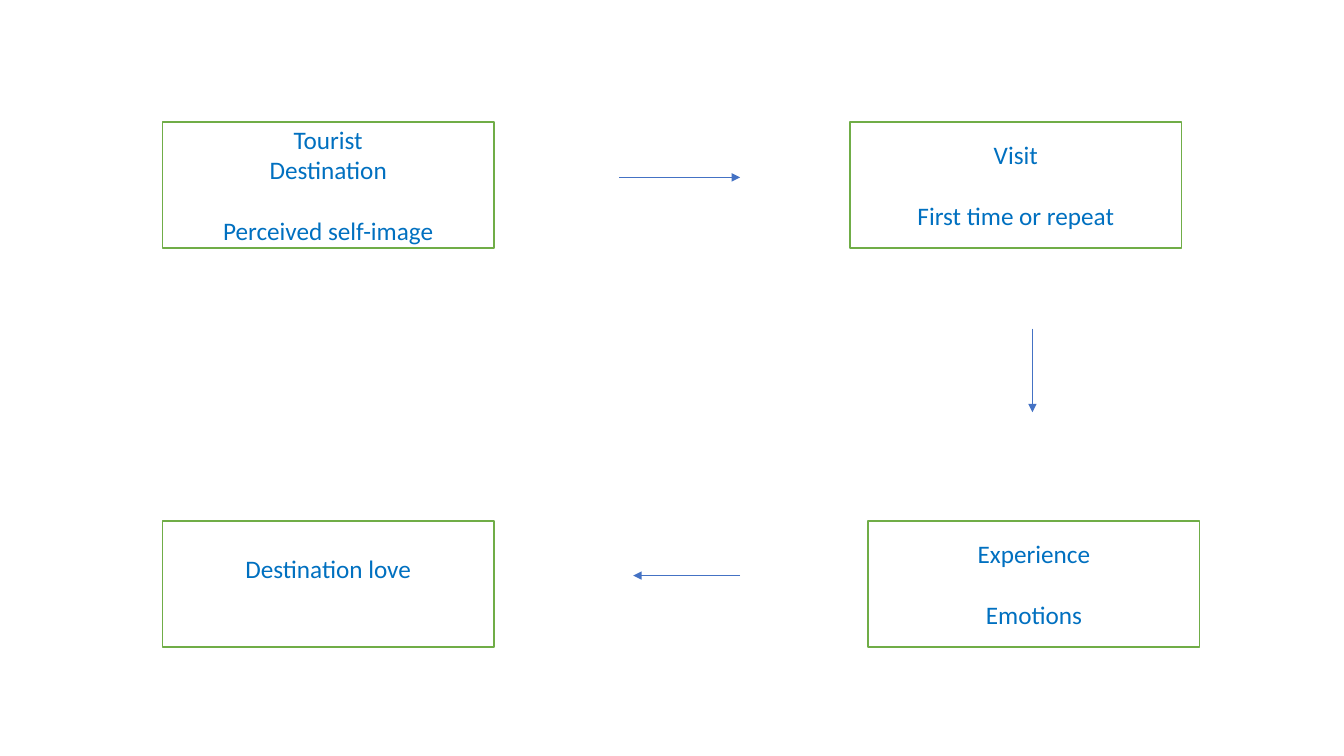
"""Build a slide of four linked stages leading from tourist destination to destination love."""
import pptx
import pptx.util
import pptx.dml.color
import pptx.enum.shapes
import pptx.enum.text
import pptx.oxml.ns
from lxml import etree

Inches, Pt = pptx.util.Inches, pptx.util.Pt

COLUMNS = {"left": 1.61, "right": 8.43, "far right": 8.61}
ROWS = {"top": 1.21, "bottom": 5.17}
BOX_WIDTH, BOX_HEIGHT = 3.29, 1.25
INSET = 0.05

STAGES = [
    {"column": "left", "row": "top", "heading": ["Tourist", "Destination"], "detail": "Perceived self-image"},
    {"column": "right", "row": "top", "heading": ["Visit"], "detail": "First time or repeat"},
    {"column": "far right", "row": "bottom", "heading": ["Experience"], "detail": "Emotions"},
    {"column": "left", "row": "bottom", "heading": ["Destination love"], "detail": None},
]
ARROWS = [
    ((6.14, 1.76), (7.34, 1.76)),
    ((10.24, 3.26), (10.24, 4.09)),
    ((7.34, 5.71), (6.28, 5.71)),
]
THEME = {
    "font": "Calibri", "size": 18, "line gap": 22, "text": "0070C0", "fill": "FFFFFF",
    "border": "70AD47", "border width": 1, "arrow": "4472C4", "arrow width": 0.5,
}


def color(name):
    return pptx.dml.color.RGBColor.from_string(THEME[name])


def assign(target, values):
    for name, value in values.items():
        setattr(target, name, value)


def add_stage(page, stage):
    box = page.shapes.add_shape(
        pptx.enum.shapes.MSO_SHAPE.RECTANGLE,
        Inches(COLUMNS[stage["column"]]), Inches(ROWS[stage["row"]]),
        Inches(BOX_WIDTH), Inches(BOX_HEIGHT))
    box.shadow.inherit = False
    box.fill.solid()
    box.fill.fore_color.rgb = color("fill")
    box.line.color.rgb = color("border")
    box.line.width = Pt(THEME["border width"])

    detail = stage["detail"]
    spare = 0 if detail else Pt(THEME["line gap"])
    frame = box.text_frame
    assign(frame, {
        "word_wrap": True,
        "vertical_anchor": pptx.enum.text.MSO_ANCHOR.MIDDLE,
        "margin_top": Inches(INSET),
        "margin_bottom": Inches(INSET) + spare,
    })
    lines = stage["heading"] + ([detail] if detail else [])
    for index, line in enumerate(lines):
        para = frame.add_paragraph() if index else frame.paragraphs[0]
        gap = THEME["line gap"] if line == detail else 0
        assign(para, {"alignment": pptx.enum.text.PP_ALIGN.CENTER, "space_before": Pt(gap)})
        span = para.add_run()
        span.text = line
        assign(span.font, {"name": THEME["font"], "size": Pt(THEME["size"])})
        span.font.color.rgb = color("text")


def add_arrow(page, start, end):
    arrow = page.shapes.add_connector(
        pptx.enum.shapes.MSO_CONNECTOR.STRAIGHT, *map(Inches, start + end))
    arrow.line.color.rgb = color("arrow")
    arrow.line.width = Pt(THEME["arrow width"])
    properties = arrow.line._get_or_add_ln()
    etree.SubElement(properties, pptx.oxml.ns.qn("a:tailEnd"), type="triangle")
    etree.SubElement(properties.getparent(), pptx.oxml.ns.qn("a:effectLst"))


def main():
    deck = pptx.Presentation()
    assign(deck, {"slide_width": Inches(13.33), "slide_height": Inches(7.5)})
    page = deck.slides.add_slide(deck.slide_layouts[6])
    for stage in STAGES:
        add_stage(page, stage)
    for start, end in ARROWS:
        add_arrow(page, start, end)
    deck.save("out.pptx")


if __name__ == "__main__":
    main()
